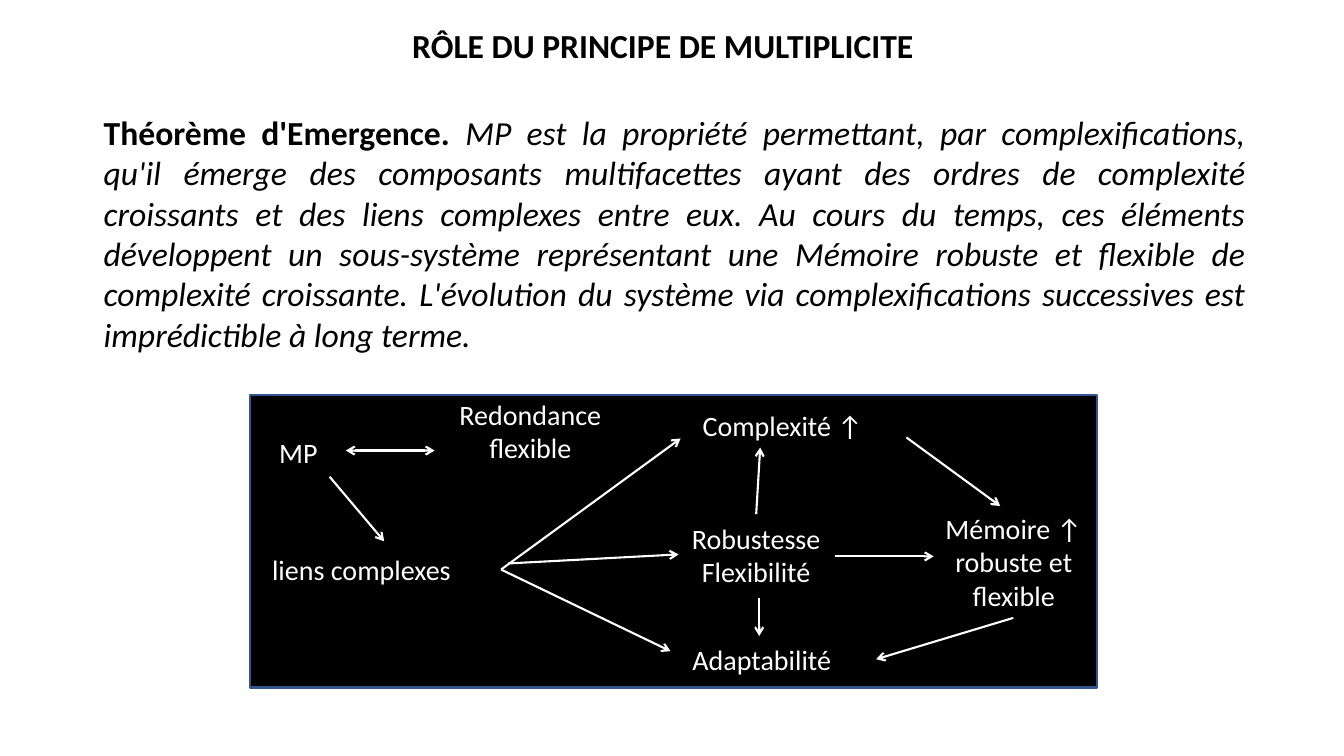
from dataclasses import dataclass

from lxml.etree import SubElement
from pptx import Presentation
from pptx.dml.color import RGBColor
from pptx.enum.shapes import MSO_CONNECTOR as Conn, MSO_SHAPE as Form
from pptx.enum.text import MSO_ANCHOR as Anchor, MSO_AUTO_SIZE as Fit, PP_ALIGN as Align
from pptx.oxml.ns import qn
from pptx.shapes.base import BaseShape
from pptx.shapes.shapetree import GroupShapes
from pptx.text.text import TextFrame
from pptx.util import Inches, Pt

BLACK = RGBColor(0x00, 0x00, 0x00)
WHITE = RGBColor(0xFF, 0xFF, 0xFF)
BLUE = RGBColor(0x32, 0x54, 0x91)
CELL = Inches(0.1)
FONT = "Calibri"


@dataclass(frozen=True)
class Label:
    """Words in a box measured in grid cells."""
    text: str
    left: float
    top: float
    wide: float
    high: float
    align: Align = Align.LEFT


@dataclass(frozen=True)
class Arrow:
    """A line between two grid points, with a head at its end or at both."""
    x1: float
    y1: float
    x2: float
    y2: float
    both: bool = False


LABELS = [
    Label("Redondance\nflexible", 43, 38.9, 19.2, 7.7, Align.CENTER),
    Label("MP", 26.7, 42.7, 7, 4.4),
    Label("liens complexes", 26, 54.3, 23.4, 4.4),
    Label("Complexité ↑", 68.7, 40, 30.7, 4.4),
    Label("Robustesse\nFlexibilité", 65.7, 51.2, 18.6, 7.7, Align.CENTER),
    Label("Adaptabilité", 67.7, 63.2, 19.3, 4.4),
    Label("Mémoire ↑\nrobuste et\nflexible", 90.9, 50.2, 19.3, 11.1, Align.CENTER),
]
ARROWS = [
    Arrow(32.7, 47.3, 38.1, 53.7),
    Arrow(49.7, 56.5, 67.5, 43.5),
    Arrow(50.4, 55.9, 67.3, 55),
    Arrow(49.7, 56.5, 66.5, 64.6),
    Arrow(89.9, 43.4, 99.2, 50.2),
    Arrow(43.1, 44.7, 34.3, 44.7, both=True),
    Arrow(82.8, 55.2, 92.6, 55.2),
    Arrow(100.5, 61.3, 86.9, 65.4),
    Arrow(75.3, 59.3, 75.3, 63.1),
    Arrow(75, 51, 75.4, 44.4),
]
LEAD = "Théorème d'Emergence."
BODY = (
    " MP est la propriété permettant, par complexifications, qu'il émerge des "
    "composants multifacettes ayant des ordres de complexité croissants et des "
    "liens complexes entre eux. Au cours du temps, ces éléments développent un "
    "sous-système représentant une Mémoire robuste et flexible de complexité "
    "croissante. L'évolution du système via complexifications successives est "
    "imprédictible à long terme."
)


def cells(*spans: float) -> list[int]:
    """Turn grid cells into lengths."""
    return [round(span * CELL) for span in spans]


def write(frame: TextFrame, text: str, *, size: int = 24, color: RGBColor = BLACK,
          bold: bool = False, italic: bool = False, align: Align = Align.LEFT) -> None:
    """Add text to the last paragraph, starting a new one at each line break."""
    frame.word_wrap = True
    for row, line in enumerate(text.split("\n")):
        para = frame.add_paragraph() if row else frame.paragraphs[-1]
        para.alignment = align
        run = para.add_run()
        run.text = line
        font = run.font
        font.name, font.size = FONT, Pt(size)
        font.bold, font.italic = bold, italic
        font.color.rgb = color


def place(shape: BaseShape, *box: float) -> None:
    """Move and size a shape on the grid."""
    shape.left, shape.top, shape.width, shape.height = cells(*box)


def draw_label(group: GroupShapes, item: Label) -> None:
    """Draw a white label of the diagram."""
    box = group.add_textbox(*cells(item.left, item.top, item.wide, item.high))
    write(box.text_frame, item.text, size=20, color=WHITE, align=item.align)


def draw_arrow(group: GroupShapes, item: Arrow) -> None:
    """Draw a white arrow of the diagram."""
    ends = cells(item.x1, item.y1, item.x2, item.y2)
    link = group.add_connector(Conn.STRAIGHT, *ends)
    link.line.color.rgb = WHITE
    link.line.width = Pt(1.5)
    props = link.element.spPr
    for tip in ("a:headEnd", "a:tailEnd") if item.both else ("a:tailEnd",):
        SubElement(props.find(qn("a:ln")), qn(tip), type="arrow")
    SubElement(props, qn("a:effectLst"))


def main() -> None:
    """Build the slide and save it."""
    deck = Presentation()
    deck.slide_width, deck.slide_height = Inches(13.33), Inches(7.5)
    slide = deck.slides.add_slide(deck.slide_layouts[5])

    title = slide.shapes.title
    place(title, 36, 2, 59.5, 5)
    title.text_frame.auto_size = Fit.NONE
    title.text_frame.vertical_anchor = Anchor.TOP
    write(title.text_frame, "RÔLE DU PRINCIPE DE MULTIPLICITE", bold=True, align=Align.CENTER)

    theorem = slide.shapes.add_textbox(*cells(9.3, 10.6, 115.2, 25.2)).text_frame
    write(theorem, LEAD, bold=True, align=Align.JUSTIFY)
    write(theorem, BODY, italic=True, align=Align.JUSTIFY)
    theorem.paragraphs[0].space_before = Pt(6)

    group = slide.shapes.add_group_shape().shapes
    panel = group.add_shape(Form.RECTANGLE, *cells(24.8, 39.2, 84, 29))
    panel.shadow.inherit = False
    panel.fill.solid()
    panel.fill.fore_color.rgb = BLACK
    panel.line.color.rgb = BLUE
    panel.line.width = Pt(1.75)
    for label in LABELS:
        draw_label(group, label)
    for arrow in ARROWS:
        draw_arrow(group, arrow)

    deck.save("out.pptx")


if __name__ == "__main__":
    main()
